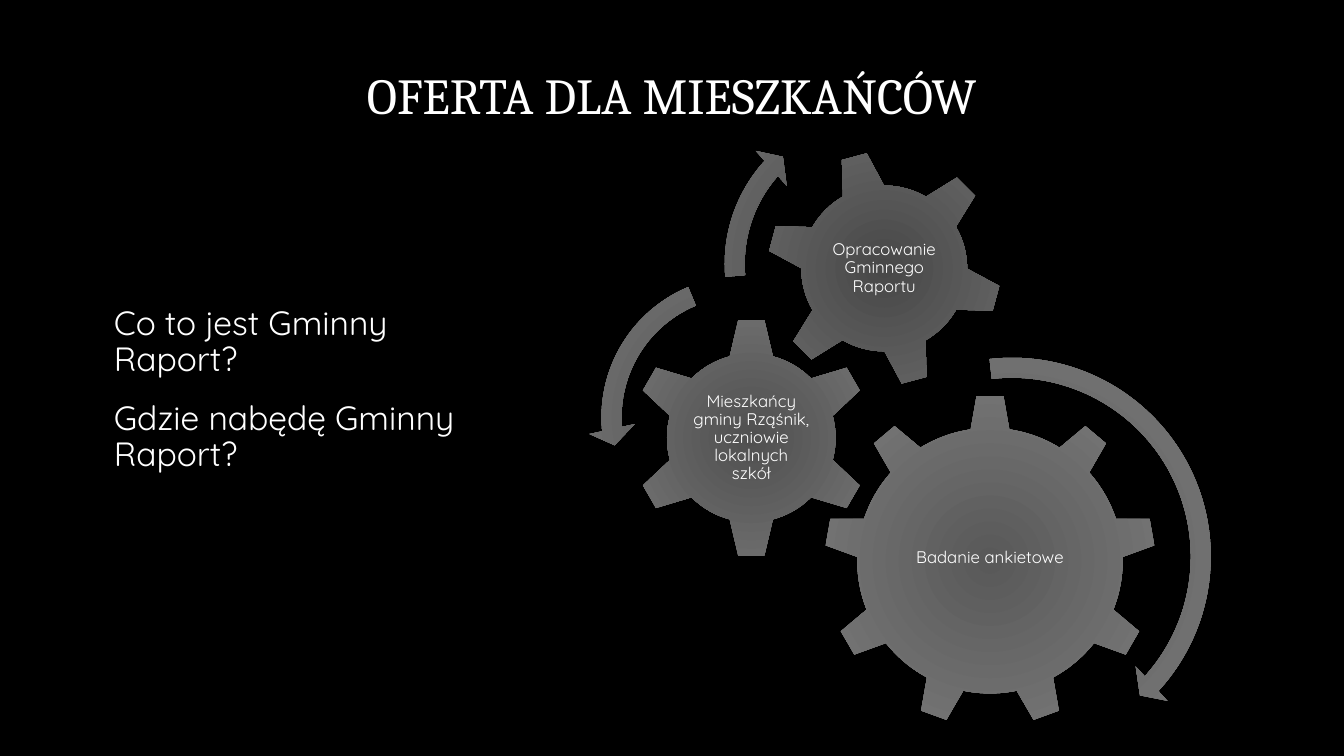
from pptx import Presentation, util as u
from pptx.dml.color import RGBColor
from pptx.enum import shapes, text
from pptx.oxml import parse_xml
from pptx.oxml.ns import nsdecls, qn

SHAPE = shapes.MSO_SHAPE
WHITE = "FFFFFF"
LARGE_TONES = ("595959", "7D7D7D")
MIDDLE_TONES = ("505050", "777777")
SMALL_TONES = ("484848", "727272")

GEARS = [
    (SHAPE.GEAR_9, 5.94, 7.49, 8.36, 0, LARGE_TONES,
     "Badanie ankietowe", 5, 4.29, 0.08),
    (SHAPE.GEAR_6, 1.07, 5.54, 6.07, 0, MIDDLE_TONES,
     "Mieszkańcy gminy Rząśnik, uczniowie lokalnych szkół", 3.02, 3, 0),
    (SHAPE.GEAR_6, 4.47, 1.32, 5.97, 345, SMALL_TONES,
     "Opracowanie Gminnego Raportu", 3.35, 3.35, 0),
]
ARROWS = [
    (SHAPE.CIRCULAR_ARROW, 5.33, 6.22, 10.69, LARGE_TONES,
     (0.047, 2.99, 25.401, 158.107, 0.055)),
    (SHAPE.LEFT_CIRCULAR_ARROW, 0, 4.17, 7.77, MIDDLE_TONES,
     (0.065, 4.3, 104.891, 148.378, 0.075)),
    (SHAPE.CIRCULAR_ARROW, 3.1, 0, 8.38, SMALL_TONES,
     (0.06, 3.941, 133.138, 105.082, 0.07)),
]


def color(value):
    return RGBColor.from_string(value)


def add_text(parent, lines, box, *, size, font="Quicksand", align=text.PP_ALIGN.LEFT,
             anchor=text.MSO_ANCHOR.TOP, spacing=0.9, gap=0, insets=(0.33, 0.18)):
    frame = parent.add_textbox(*map(u.Cm, box)).text_frame
    frame.word_wrap = True
    frame.vertical_anchor = anchor
    frame.margin_left = frame.margin_right = u.Cm(insets[0])
    frame.margin_top = frame.margin_bottom = u.Cm(insets[1])
    for index, line in enumerate(lines):
        para = frame.add_paragraph() if index else frame.paragraphs[0]
        para.alignment = align
        para.line_spacing = spacing
        if index:
            para.space_before = u.Pt(gap)
        span = para.add_run()
        span.text = line
        span.font.name = font
        span.font.size = u.Pt(size)
        span.font.color.rgb = color(WHITE)


def add_shaded(parent, kind, left, top, side, tones):
    shape = parent.add_shape(kind, *map(u.Cm, (left, top, side, side)))
    shape.shadow.inherit = False
    shape.line.fill.background()
    stops = "".join(
        f'<a:gs pos="{place}"><a:srgbClr val="{tone}"/></a:gs>'
        for place, tone in zip((0, 100000), tones))
    gradient = parse_xml(
        f'<a:gradFill {nsdecls("a")} rotWithShape="1"><a:gsLst>{stops}</a:gsLst>'
        '<a:path path="circle"><a:fillToRect l="100000" t="100000" '
        'r="100000" b="100000"/></a:path></a:gradFill>')
    shape._element.spPr.find(qn("a:prstGeom")).addnext(gradient)
    return shape


def add_title(page, box):
    add_text(page.shapes, ["OFERTA DLA MIESZKAŃCÓW"], box, size=36, font="Cambria",
             align=text.PP_ALIGN.CENTER, anchor=text.MSO_ANCHOR.BOTTOM, spacing=0.8)


def add_questions(page, box):
    add_text(page.shapes, ["Co to jest Gminny Raport?", "Gdzie nabędę Gminny Raport?"],
             box, size=24, gap=16)


def add_gears(page, box):
    x, y = box
    parent = page.shapes.add_group_shape().shapes
    for kind, left, top, side, turn, tones, label, width, height, lift in GEARS:
        gear = add_shaded(parent, kind, x + left, y + top, side, tones)
        gear.rotation = turn
        label_box = (x + left + (side - width) / 2,
                     y + top + (side - height) / 2 - lift, width, height)
        add_text(parent, [label], label_box, size=12, align=text.PP_ALIGN.CENTER,
                 anchor=text.MSO_ANCHOR.MIDDLE, insets=(0.05, 0.05))
    for kind, left, top, side, tones, bends in ARROWS:
        arrow = add_shaded(parent, kind, x + left, y + top, side, tones)
        for index, bend in enumerate(bends):
            arrow.adjustments[index] = bend


def main():
    deck = Presentation()
    deck.slide_width, deck.slide_height = u.Cm(33.87), u.Cm(19.05)
    page = deck.slides.add_slide(deck.slide_layouts[6])
    page.background.fill.solid()
    page.background.fill.fore_color.rgb = color("000000")
    add_title(page, (2.54, 0.91, 28.78, 2.39))
    add_questions(page, (2.54, 7.54, 9.98, 4.78))
    add_gears(page, (14.83, 2.46))
    deck.save("out.pptx")


if __name__ == "__main__":
    main()
